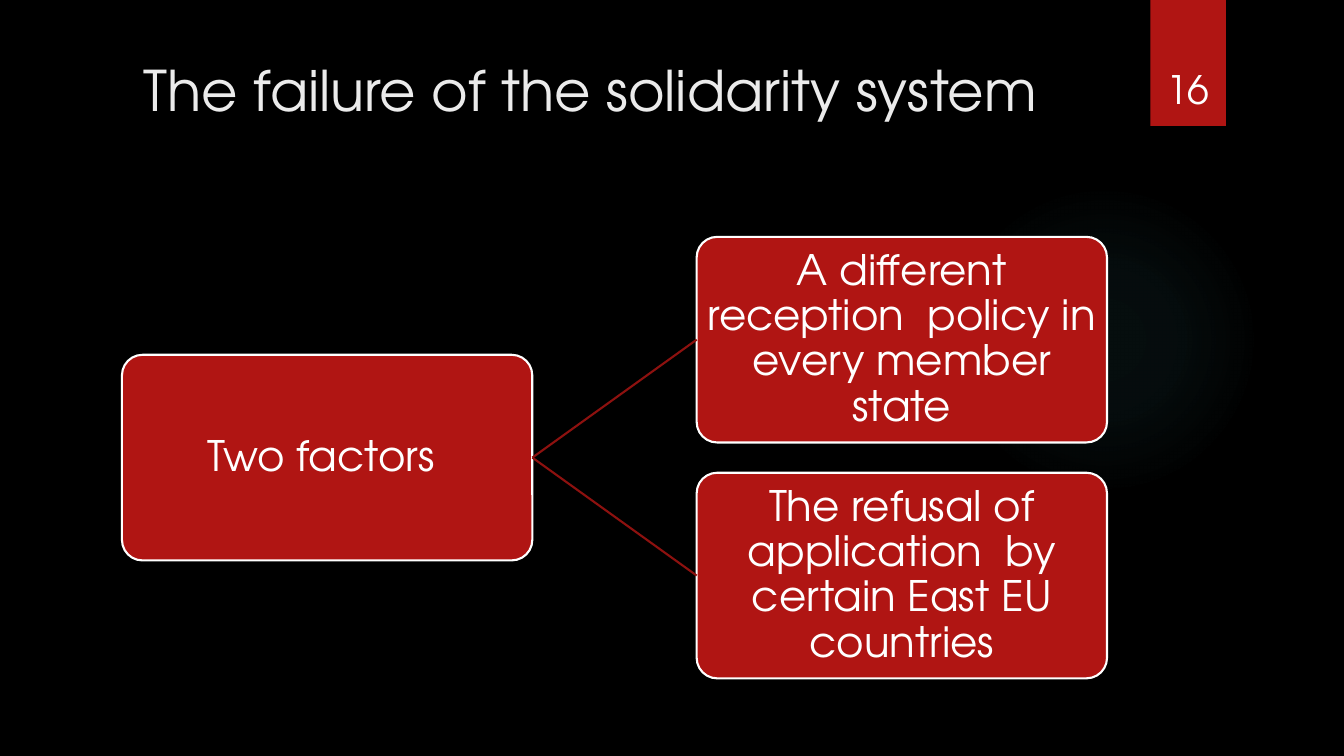
from dataclasses import dataclass

from lxml import etree
from pptx import Presentation
from pptx.dml.color import RGBColor
from pptx.enum.shapes import MSO_CONNECTOR as Connector, MSO_SHAPE as Shape
from pptx.enum.text import MSO_ANCHOR as Anchor, PP_ALIGN as Align
from pptx.oxml import parse_xml
from pptx.oxml.ns import nsdecls, qn
from pptx.util import Inches, Pt

TITLE = "The failure of the solidarity system"
PAGE = "16"
CAUSE = "Two factors "
FACTORS = [
    "A different reception  policy in every member state",
    "The refusal of application  by certain East EU countries",
]


@dataclass(frozen=True)
class Theme:
    font: str = "TeX Gyre Adventor"
    background: str = "000000"
    accent: str = "B01513"
    branch: str = "8D110F"
    heading: str = "EBEBEB"
    light: str = "FFFFFF"
    glow: str = "50B9C1"
    title_size: int = 40
    page_size: int = 28
    box_size: int = 30
    line_width: float = 1.5


THEME = Theme()
GLOW_STOPS = [(0, 7), (36, 6), (69, 0)]
BOX_W, BOX_H = 4.07, 2.04
CAUSE_LEFT, FACTOR_LEFT = 1.21, 6.91
FACTOR_TOP, FACTOR_STEP = 2.35, 2.34


def rgb(value):
    return RGBColor.from_string(value)


def write(frame, text, size, color, anchor, inset=None):
    frame.word_wrap = True
    frame.vertical_anchor = anchor
    if inset is not None:
        frame.margin_left = frame.margin_right = Inches(inset)
        frame.margin_top = frame.margin_bottom = Inches(inset)
    paragraph = frame.paragraphs[0]
    paragraph.alignment = Align.CENTER
    run = paragraph.add_run()
    run.text = text
    run.font.name = THEME.font
    run.font.size = Pt(size)
    run.font.color.rgb = rgb(color)
    return paragraph


def add_block(slide, kind, left, top, width, height):
    block = slide.shapes.add_shape(
        kind, Inches(left), Inches(top), Inches(width), Inches(height))
    block.shadow.inherit = False
    block.fill.solid()
    block.fill.fore_color.rgb = rgb(THEME.accent)
    block.line.fill.background()
    return block


def add_glow(slide):
    glow = add_block(slide, Shape.OVAL, 9.41, 1.83, 3.08, 3.08)
    stops = "".join(
        f'<a:gs pos="{place * 1000}"><a:srgbClr val="{THEME.glow}">'
        f'<a:alpha val="{alpha * 1000}"/></a:srgbClr></a:gs>'
        for place, alpha in GLOW_STOPS)
    gradient = parse_xml(
        f'<a:gradFill {nsdecls("a")}><a:gsLst>{stops}</a:gsLst>'
        '<a:path path="circle"><a:fillToRect l="50000" t="50000" '
        'r="50000" b="50000"/></a:path></a:gradFill>')
    properties = glow._element.spPr
    properties.replace(properties.find(qn("a:solidFill")), gradient)


def add_box(slide, text, left, top):
    box = add_block(slide, Shape.ROUNDED_RECTANGLE, left, top, BOX_W, BOX_H)
    box.adjustments[0] = 0.1
    box.line.color.rgb = rgb(THEME.light)
    box.line.width = Pt(THEME.line_width)
    paragraph = write(box.text_frame, text, THEME.box_size, THEME.light,
                      Anchor.MIDDLE, 0.02)
    paragraph.line_spacing = 0.9
    return box


def add_branch(slide, cause, factor):
    branch = slide.shapes.add_connector(Connector.STRAIGHT, 0, 0, 0, 0)
    branch.begin_connect(cause, 3)
    branch.end_connect(factor, 1)
    branch.line.color.rgb = rgb(THEME.branch)
    branch.line.width = Pt(THEME.line_width)
    etree.SubElement(branch._element.spPr, qn("a:effectLst"))


def main():
    deck = Presentation()
    deck.slide_width, deck.slide_height = Inches(13.33), Inches(7.5)
    slide = deck.slides.add_slide(deck.slide_layouts[5])
    slide.background.fill.solid()
    slide.background.fill.fore_color.rgb = rgb(THEME.background)

    add_glow(slide)
    add_block(slide, Shape.RECTANGLE, 11.41, 0, 0.75, 1.25)

    title = slide.shapes.title
    title.left, title.top = Inches(0.71), Inches(0.5)
    title.width, title.height = Inches(10.29), Inches(1.53)
    write(title.text_frame, TITLE, THEME.title_size, THEME.heading, Anchor.TOP)

    cause_top = FACTOR_TOP + FACTOR_STEP * (len(FACTORS) - 1) / 2
    cause = add_box(slide, CAUSE, CAUSE_LEFT, cause_top)
    for index, text in enumerate(FACTORS):
        factor = add_box(slide, text, FACTOR_LEFT,
                         FACTOR_TOP + index * FACTOR_STEP)
        add_branch(slide, cause, factor)

    page = slide.shapes.add_textbox(
        Inches(11.32), Inches(0.32), Inches(0.92), Inches(0.84))
    write(page.text_frame, PAGE, THEME.page_size, THEME.light, Anchor.BOTTOM)

    deck.save("out.pptx")


if __name__ == "__main__":
    main()
